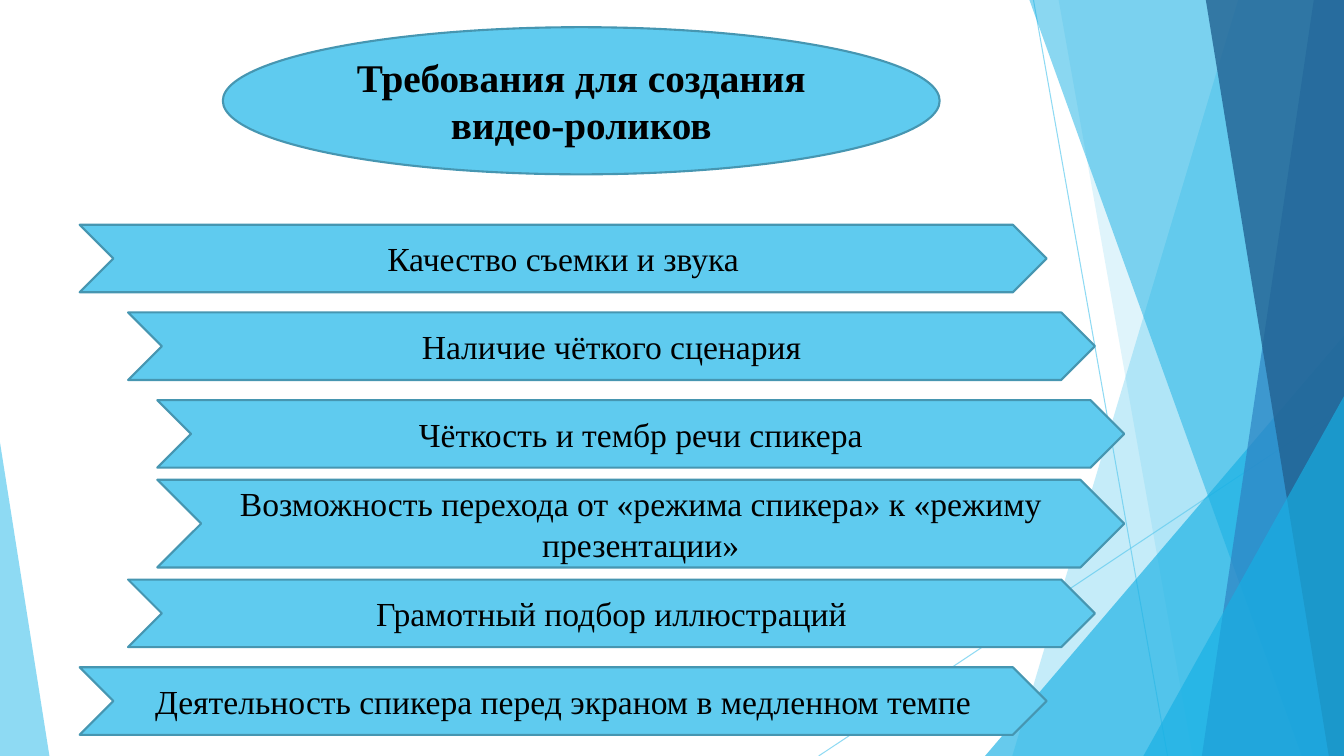
"""Build a slide listing the requirements for making video clips."""
import pptx
import pptx.dml.color
import pptx.enum.shapes
import pptx.enum.text
import pptx.oxml
import pptx.oxml.ns
import pptx.util
from pptx.util import Inches

SKY = pptx.dml.color.RGBColor(0x5F, 0xCB, 0xEF)
CYAN = pptx.dml.color.RGBColor(0x17, 0xB0, 0xE4)
BLUE = pptx.dml.color.RGBColor(0x2E, 0x83, 0xC3)
NAVY = pptx.dml.color.RGBColor(0x22, 0x62, 0x92)
OUTLINE = pptx.dml.color.RGBColor(0x46, 0x96, 0xB1)
BLACK = pptx.dml.color.RGBColor(0, 0, 0)

FONT = "Times New Roman"
WIDTH, HEIGHT = 13.33, 7.5
SHAPES = pptx.enum.shapes.MSO_SHAPE

TITLE = "Требования для создания видео-роликов"
TITLE_BOX = (2.21, 0.27, 7.11, 1.46)
CHEVRON_WIDTH = 9.59
REQUIREMENTS = [
    ("Качество съемки и звука", 0.79, 2.23, 0.67),
    ("Наличие чёткого сценария", 1.27, 3.1, 0.67),
    ("Чёткость и тембр речи спикера", 1.56, 3.97, 0.67),
    ("Возможность перехода от «режима спикера» к «режиму презентации»", 1.56, 4.76, 0.87),
    ("Грамотный подбор иллюстраций", 1.27, 5.75, 0.67),
    ("Деятельность спикера перед экраном в медленном темпе", 0.79, 6.62, 0.67),
]

THIN_LINES = [(10.25, 0, 11.58, HEIGHT), (WIDTH, 4.03, 8.12, HEIGHT)]
BACK_BANDS = [(12.28, 10.04, SKY, 36), (10.5, 11.83, SKY, 20)]
FRONT_BANDS = [
    (10.21, 12.91, CYAN, 50),
    (13.03, 11.92, BLUE, 70),
    (11.96, 13.18, NAVY, 80),
]
WIDE_TRIANGLE = (9.77, 3.33, 3.56, 1, CYAN, 66)
NARROW_TRIANGLE = (11.34, 3.93, 1.99, 1, CYAN, 66)
LEFT_TRIANGLE = (0, 4.39, 0.49, 0, SKY, 70)


def set_opacity(shape, percent):
    for color in shape._element.spPr.iter(pptx.oxml.ns.qn("a:srgbClr")):
        alpha = pptx.oxml.xmlchemy.OxmlElement("a:alpha")
        alpha.set("val", str(percent * 1000))
        color.append(alpha)


def fill_decoration(shape, color, opacity):
    shape.shadow.inherit = False
    shape.fill.solid()
    shape.fill.fore_color.rgb = color
    shape.line.fill.background()
    set_opacity(shape, opacity)


def add_thin_line(slide, ends):
    connector = slide.shapes.add_connector(
        pptx.enum.shapes.MSO_CONNECTOR.STRAIGHT, *map(Inches, ends))
    connector.line.color.rgb = SKY
    connector.line.width = pptx.util.Pt(0.75)
    set_opacity(connector, 70)
    connector._element.spPr.append(pptx.oxml.xmlchemy.OxmlElement("a:effectLst"))


def add_band(slide, top_x, bottom_x, color, opacity):
    builder = slide.shapes.build_freeform(Inches(top_x), 0)
    corners = [(WIDTH, 0), (WIDTH, HEIGHT), (bottom_x, HEIGHT)]
    builder.add_line_segments([(Inches(x), Inches(y)) for x, y in corners])
    fill_decoration(builder.convert_to_shape(), color, opacity)


def add_triangle(slide, left, top, width, apex, color, opacity):
    box = map(Inches, (left, top, width, HEIGHT - top))
    triangle = slide.shapes.add_shape(SHAPES.ISOSCELES_TRIANGLE, *box)
    triangle.adjustments[0] = apex
    fill_decoration(triangle, color, opacity)


def add_label(slide, preset, box, text, size, bold=False):
    shape = slide.shapes.add_shape(preset, *map(Inches, box))
    shape.shadow.inherit = False
    shape.fill.solid()
    shape.fill.fore_color.rgb = SKY
    shape.line.color.rgb = OUTLINE
    shape.line.width = pptx.util.Pt(1.5)
    frame = shape.text_frame
    frame.text = text
    frame.word_wrap = True
    frame.vertical_anchor = pptx.enum.text.MSO_ANCHOR.MIDDLE
    paragraph = frame.paragraphs[0]
    paragraph.alignment = pptx.enum.text.PP_ALIGN.CENTER
    font = paragraph.runs[0].font
    font.name = FONT
    font.size = pptx.util.Pt(size)
    font.bold = bold
    font.color.rgb = BLACK


def main():
    presentation = pptx.Presentation()
    presentation.slide_width = Inches(WIDTH)
    presentation.slide_height = Inches(HEIGHT)
    slide = presentation.slides.add_slide(presentation.slide_layouts[6])

    for ends in THIN_LINES:
        add_thin_line(slide, ends)
    for band in BACK_BANDS:
        add_band(slide, *band)
    add_triangle(slide, *WIDE_TRIANGLE)
    for band in FRONT_BANDS:
        add_band(slide, *band)
    add_triangle(slide, *NARROW_TRIANGLE)
    add_triangle(slide, *LEFT_TRIANGLE)

    add_label(slide, SHAPES.OVAL, TITLE_BOX, TITLE, 28, bold=True)
    for text, left, top, height in REQUIREMENTS:
        add_label(slide, SHAPES.CHEVRON, (left, top, CHEVRON_WIDTH, height), text, 24)

    presentation.save("out.pptx")


if __name__ == "__main__":
    main()
